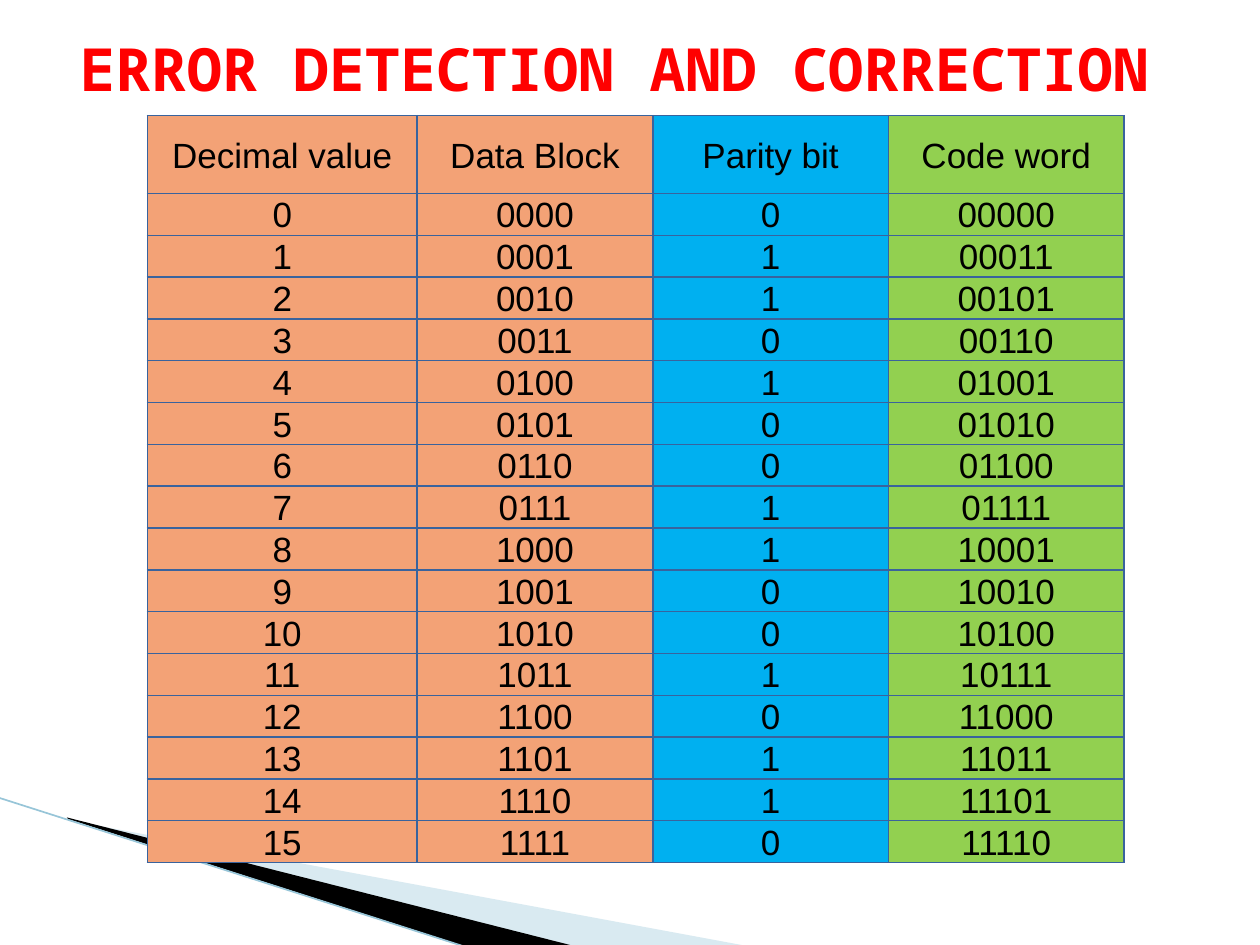
import pptx
import pptx.dml.color
import pptx.enum.shapes
import pptx.enum.text
import pptx.oxml
import pptx.oxml.ns
import pptx.util
from lxml import etree

Cm = pptx.util.Cm
HEADINGS = ["Decimal value", "Data Block", "Parity bit", "Code word"]
COLUMN_FILLS = ["F3A276", "F3A276", "00B0F0", "92D050"]
COLUMN_WIDTHS = [5.44, 4.75, 4.75, 4.75]
HEADER_HEIGHT, ROW_HEIGHT = 1.57, 0.79


def color(hex_string):
    """Turn a hex string into a colour."""
    return pptx.dml.color.RGBColor.from_string(hex_string)


def write(frame, text, size, font, fill, bold=False, spacing=1.0):
    """Write one centred paragraph into a text frame."""
    frame.word_wrap = True
    paragraph = frame.paragraphs[0]
    paragraph.alignment = pptx.enum.text.PP_ALIGN.CENTER
    paragraph.line_spacing = spacing
    run = paragraph.add_run()
    run.text = text
    run.font.size = pptx.util.Pt(size)
    run.font.name = font
    run.font.bold = bold
    run.font.color.rgb = color(fill)


def add_wedge(slide, left, top, points, fill, alpha=100):
    """Draw a filled polygon from points relative to left and top."""
    corners = [(Cm(left + x), Cm(top + y)) for x, y in points]
    builder = slide.shapes.build_freeform(*corners[0], scale=1.0)
    builder.add_line_segments(corners[1:], close=True)
    wedge = builder.convert_to_shape()
    wedge.shadow.inherit = False
    wedge.fill.solid()
    wedge.fill.fore_color.rgb = color(fill)
    wedge.line.fill.background()
    if alpha < 100:
        tint = wedge.fill._xPr.find(".//" + pptx.oxml.ns.qn("a:srgbClr"))
        etree.SubElement(tint, pptx.oxml.ns.qn("a:alpha"), val=str(alpha * 1000))


def add_corner_sweep(slide, left, top):
    """Draw the pale and black wedges and the edge line at the lower left."""
    add_wedge(slide, left, top,
              [(1.4, 0.46), (15.11, 3), (11.58, 3), (1.4, 0.43)], "A0CBDC", alpha=40)
    add_wedge(slide, left, top,
              [(1.35, 0.4), (11.61, 3), (9.45, 3.02), (1.37, 0.43)], "000000")
    edge = slide.shapes.add_connector(
        pptx.enum.shapes.MSO_CONNECTOR.STRAIGHT,
        Cm(left - 0.03), Cm(top), Cm(left + 9.42), Cm(top + 3.02))
    edge.line.color.rgb = color("97C5D8")
    edge.line.width = pptx.util.Pt(0.95)
    etree.SubElement(edge._element.spPr, pptx.oxml.ns.qn("a:effectLst"))


def place_title(slide, left, top, width, height):
    """Move the title placeholder into its box and fill it."""
    title = slide.shapes.title
    title.left, title.top, title.width, title.height = map(Cm, (left, top, width, height))
    title.text_frame.vertical_anchor = pptx.enum.text.MSO_ANCHOR.MIDDLE
    write(title.text_frame, "ERROR DETECTION AND CORRECTION", 34,
          "Noto Sans Mono", "FF0000", bold=True)


def add_borders(cell, hex_string, points):
    """Give a cell the same solid line on all four sides."""
    properties = cell._tc.get_or_add_tcPr()
    for side in ("lnL", "lnR", "lnT", "lnB"):
        properties.append(pptx.oxml.parse_xml(
            f'<a:{side} {pptx.oxml.ns.nsdecls("a")} w="{pptx.util.Pt(points)}">'
            f'<a:solidFill><a:srgbClr val="{hex_string}"/></a:solidFill></a:{side}>'))


def parity_row(value):
    """Return the decimal value, data block, even parity bit and code word."""
    block = f"{value:04b}"
    parity = str(block.count("1") % 2)
    return [str(value), block, parity, block + parity]


def add_parity_table(slide, left, top):
    """Draw the table of code words for all four-bit blocks."""
    rows = [HEADINGS] + [parity_row(value) for value in range(16)]
    heights = [HEADER_HEIGHT] + [ROW_HEIGHT] * 16
    table = slide.shapes.add_table(
        len(rows), len(HEADINGS), Cm(left), Cm(top),
        Cm(sum(COLUMN_WIDTHS)), Cm(sum(heights))).table
    table.first_row = table.horz_banding = False
    for column, width in zip(table.columns, COLUMN_WIDTHS):
        column.width = Cm(width)
    for row, height, texts in zip(table.rows, heights, rows):
        row.height = Cm(height)
        for cell, text, fill in zip(row.cells, texts, COLUMN_FILLS):
            add_borders(cell, "39639D", 1)
            cell.fill.solid()
            cell.fill.fore_color.rgb = color(fill)
            cell.margin_left = cell.margin_right = Cm(0.18)
            cell.margin_top = cell.margin_bottom = 0
            cell.vertical_anchor = pptx.enum.text.MSO_ANCHOR.MIDDLE
            write(cell.text_frame, text, 20, "Arial", "000000", spacing=1.07)


def main():
    """Build the slide and save it."""
    presentation = pptx.Presentation()
    presentation.slide_width, presentation.slide_height = Cm(25.4), Cm(19.05)
    slide = presentation.slides.add_slide(presentation.slide_layouts[5])
    add_corner_sweep(slide, 0, 16.08)
    place_title(slide, 0.64, 0.2, 23.5, 2.34)
    add_parity_table(slide, 2.97, 2.33)
    presentation.save("out.pptx")


if __name__ == "__main__":
    main()
